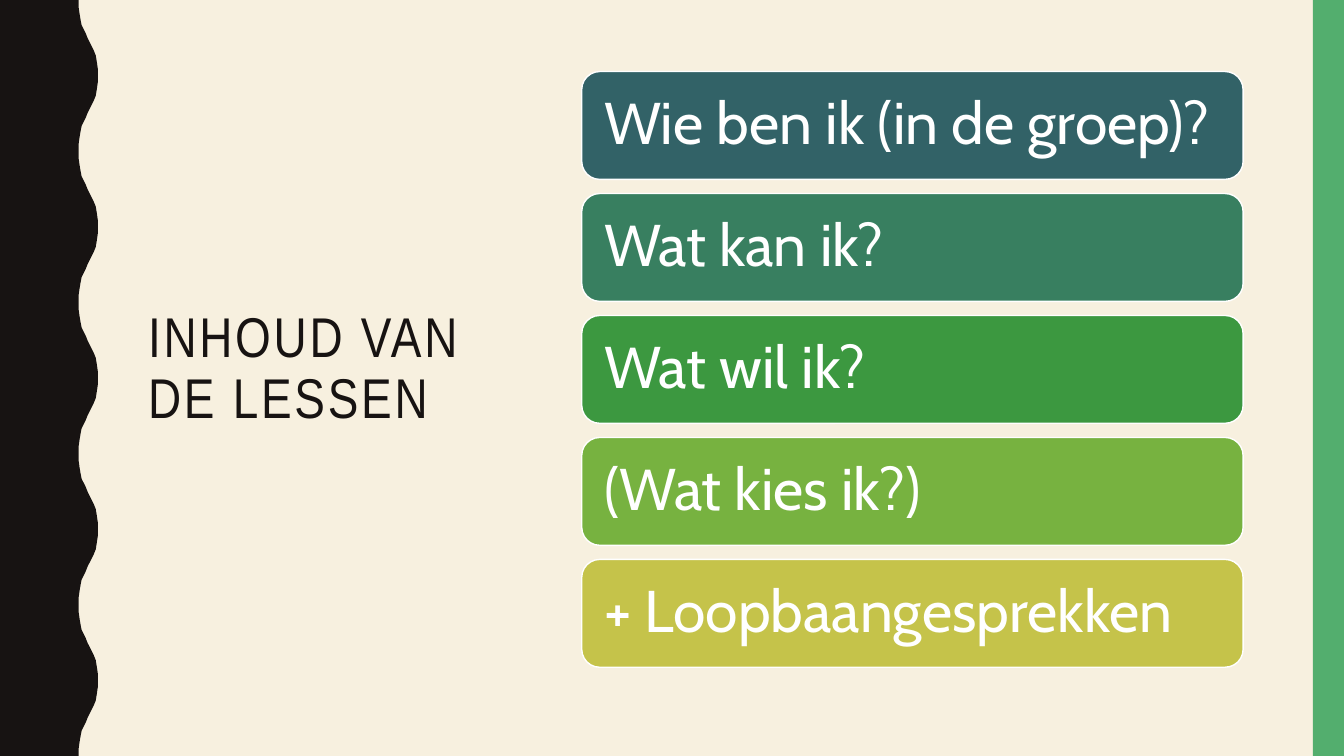
from dataclasses import dataclass

from pptx import Presentation
from pptx.dml.color import RGBColor
from pptx.enum.shapes import MSO_SHAPE
from pptx.enum.text import MSO_ANCHOR, PP_ALIGN
from pptx.util import Inches, Pt

RECTANGLE = MSO_SHAPE.RECTANGLE
ROUNDED = MSO_SHAPE.ROUNDED_RECTANGLE
MIDDLE = MSO_ANCHOR.MIDDLE
LEFT = PP_ALIGN.LEFT

SLIDE_WIDTH, SLIDE_HEIGHT = 13.33, 7.5


@dataclass(frozen=True)
class Theme:
    background: str = "F7F0DF"
    dark: str = "171312"
    accent: str = "53AE6E"
    light: str = "FFFFFF"
    title_font: str = "Arial Narrow"
    body_font: str = "Cabin"
    title_size: int = 40
    body_size: int = 42
    title_spacing: int = 200  # hundredths of a point


LESSONS = [
    ("Wie ben ik (in de groep)?", "326267"),
    ("Wat kan ik?", "387F60"),
    ("Wat wil ik?", "3C9840"),
    ("(Wat kies ik?)", "77B240"),
    ("+ Loopbaangesprekken", "C5C34A"),
]
CARD_LEFT, CARD_TOP = 5.77, 0.71
CARD_WIDTH, CARD_HEIGHT, CARD_PITCH = 6.56, 1.07, 1.21

WAVE_LENGTH, WAVE_COUNT = 1.5, 5
# From trough to crest; the way back is its mirror image.
HALF_WAVE = [
    (0.78, 0), (0.78, 0.07), (0.79, 0.14), (0.8, 0.2), (0.81, 0.25),
    (0.83, 0.29), (0.85, 0.33), (0.87, 0.38), (0.89, 0.42), (0.91, 0.46),
    (0.93, 0.5), (0.95, 0.55), (0.96, 0.61), (0.97, 0.68), (0.97, 0.75),
]


def wave_edge():
    """Return the points of the wavy edge from top to bottom, in inches."""
    mirrored = [(x, WAVE_LENGTH - y) for x, y in reversed(HALF_WAVE[:-1])]
    return [
        (x, y + index * WAVE_LENGTH)
        for index in range(WAVE_COUNT)
        for x, y in HALF_WAVE + mirrored
    ]


class SlideBuilder:
    def __init__(self, slide, theme):
        self.slide = slide
        self.theme = theme

    def background(self):
        fill = self.slide.background.fill
        fill.solid()
        fill.fore_color.rgb = RGBColor.from_string(self.theme.background)

    def paint(self, shape, color, line_color=None):
        shape.shadow.inherit = False
        shape.fill.solid()
        shape.fill.fore_color.rgb = RGBColor.from_string(color)
        if line_color:
            shape.line.color.rgb = RGBColor.from_string(line_color)
            shape.line.width = Pt(1)
        else:
            shape.line.fill.background()

    def wavy_band(self):
        points = [(Inches(x), Inches(y)) for x, y in wave_edge()]
        points.append((0, Inches(SLIDE_HEIGHT)))
        builder = self.slide.shapes.build_freeform(0, 0)
        builder.add_line_segments(points, close=True)
        self.paint(builder.convert_to_shape(), self.theme.dark)

    def block(self, kind, left, top, width, height, color, line_color=None):
        shape = self.slide.shapes.add_shape(
            kind, Inches(left), Inches(top), Inches(width), Inches(height))
        self.paint(shape, color, line_color)
        return shape

    def set_text(self, shape, text, font_name, size, color):
        """Put one left-aligned, vertically centred paragraph in a shape."""
        frame = shape.text_frame
        frame.word_wrap = True
        frame.vertical_anchor = MIDDLE
        frame.text = text
        paragraph = frame.paragraphs[0]
        paragraph.alignment = LEFT
        paragraph.line_spacing = 0.9
        run = paragraph.runs[0]
        run.font.name = font_name
        run.font.size = Pt(size)
        run.font.color.rgb = RGBColor.from_string(color)
        return run

    def title(self, text, left, top, width, height):
        box = self.slide.shapes.add_textbox(
            Inches(left), Inches(top), Inches(width), Inches(height))
        theme = self.theme
        run = self.set_text(box, text, theme.title_font, theme.title_size, theme.dark)
        run._r.get_or_add_rPr().set("spc", str(theme.title_spacing))

    def card(self, text, color, top):
        theme = self.theme
        card = self.block(ROUNDED, CARD_LEFT, top, CARD_WIDTH, CARD_HEIGHT,
                          color, theme.light)
        self.set_text(card, text, theme.body_font, theme.body_size, theme.light)
        frame = card.text_frame
        frame.margin_left = frame.margin_right = Inches(0.17)


def main():
    presentation = Presentation()
    presentation.slide_width = Inches(SLIDE_WIDTH)
    presentation.slide_height = Inches(SLIDE_HEIGHT)
    slide = presentation.slides.add_slide(presentation.slide_layouts[6])
    theme = Theme()
    builder = SlideBuilder(slide, theme)

    builder.background()
    builder.wavy_band()
    builder.block(RECTANGLE, 13.02, 0, 0.31, SLIDE_HEIGHT, theme.accent)
    builder.title("INHOUD VAN DE LESSEN", 1.37, 0.71, 3.7, 5.92)
    for index, (text, color) in enumerate(LESSONS):
        builder.card(text, color, CARD_TOP + index * CARD_PITCH)

    presentation.save("out.pptx")


if __name__ == "__main__":
    main()
